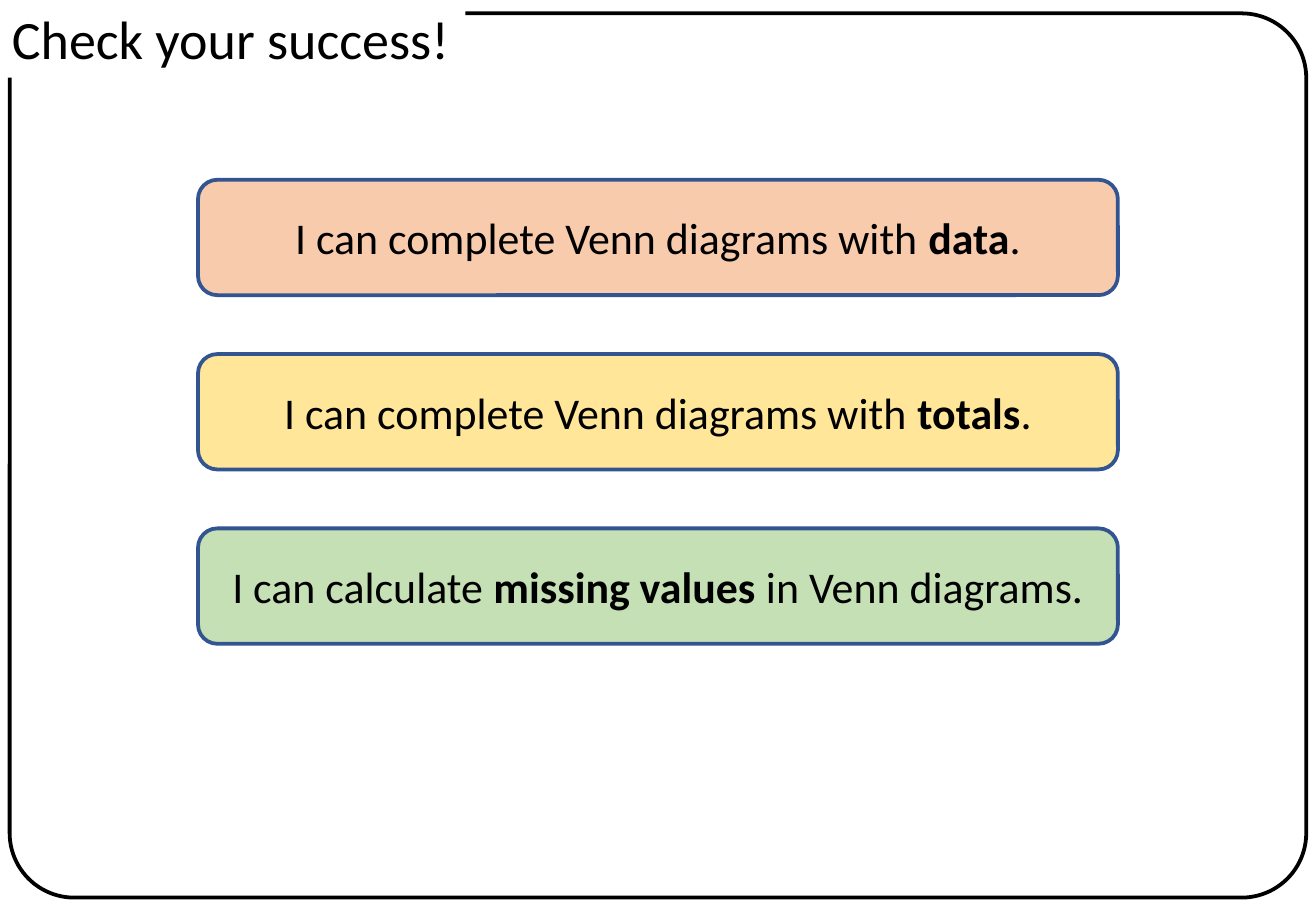
from dataclasses import dataclass

from pptx import Presentation
from pptx.dml.color import RGBColor
from pptx.enum.shapes import MSO_SHAPE
from pptx.enum.text import MSO_ANCHOR, MSO_AUTO_SIZE, PP_ALIGN
from pptx.util import Inches, Pt

ROUNDED = MSO_SHAPE.ROUNDED_RECTANGLE
RECTANGLE = MSO_SHAPE.RECTANGLE
MIDDLE, TOP = MSO_ANCHOR.MIDDLE, MSO_ANCHOR.TOP
CENTER, LEFT = PP_ALIGN.CENTER, PP_ALIGN.LEFT
GROW = MSO_AUTO_SIZE.SHAPE_TO_FIT_TEXT
BLANK_LAYOUT = 6


@dataclass(frozen=True)
class Theme:
    font: str = "Calibri"
    title_size: float = 32
    card_size: float = 26
    line_width: float = 2.25
    ink: str = "000000"
    paper: str = "FFFFFF"
    card_line: str = "325491"
    card_fills: tuple = ("F8CBAD", "FFE699", "C5E0B4")


THEME = Theme()

# Each statement is a list of (text, bold) runs
STATEMENTS = [
    [("I can complete Venn diagrams with ", False), ("data", True), (".", False)],
    [("I can complete Venn diagrams with ", False), ("totals", True), (".", False)],
    [("I can calculate ", False), ("missing values ", True),
     ("in Venn diagrams.", False)],
]


def add_panel(page, kind, box, fill=None, line=None):
    panel = page.shapes.add_shape(kind, *(Inches(length) for length in box))
    panel.shadow.inherit = False
    if fill:
        panel.fill.solid()
        panel.fill.fore_color.rgb = RGBColor.from_string(fill)
    else:
        panel.fill.background()
    if line:
        panel.line.color.rgb = RGBColor.from_string(line)
        panel.line.width = Pt(THEME.line_width)
    else:
        panel.line.fill.background()
    return panel


def write_runs(panel, runs, size, align, anchor, inset):
    frame = panel.text_frame
    frame.vertical_anchor = anchor
    frame.margin_left = frame.margin_right = Inches(inset)
    frame.margin_top = frame.margin_bottom = Inches(0.05)
    para = frame.paragraphs[0]
    para.alignment = align
    for text, bold in runs:
        span = para.add_run()
        span.text = text
        span.font.name = THEME.font
        span.font.size = Pt(size)
        span.font.bold = bold
        span.font.color.rgb = RGBColor.from_string(THEME.ink)


def add_frame(page, box):
    border = add_panel(page, ROUNDED, box, line=THEME.ink)
    border.adjustments[0] = 0.073


def add_cards(page, box, card_height):
    left, top, width, height = box
    step = (height - card_height) / (len(STATEMENTS) - 1)
    for index, (runs, fill) in enumerate(zip(STATEMENTS, THEME.card_fills)):
        card_box = (left, top + index * step, width, card_height)
        card = add_panel(page, ROUNDED, card_box, fill, THEME.card_line)
        write_runs(card, runs, THEME.card_size, CENTER, MIDDLE, inset=0.11)
        card.text_frame.word_wrap = True


def add_title(page, box):
    # The white label covers the frame's top left corner
    label = add_panel(page, RECTANGLE, box, THEME.paper)
    write_runs(label, [("Check your success!", False)], THEME.title_size,
               LEFT, TOP, inset=0.1)
    label.text_frame.word_wrap = False
    label.text_frame.auto_size = GROW


def main():
    deck = Presentation()
    deck.slide_width, deck.slide_height = Inches(10.83), Inches(7.5)
    page = deck.slides.add_slide(deck.slide_layouts[BLANK_LAYOUT])
    add_frame(page, (0.08, 0.11, 10.67, 7.28))
    add_cards(page, (1.63, 1.48, 7.57, 3.82), card_height=0.95)
    add_title(page, (0, 0, 3.83, 0.64))
    deck.save("out.pptx")


if __name__ == "__main__":
    main()
